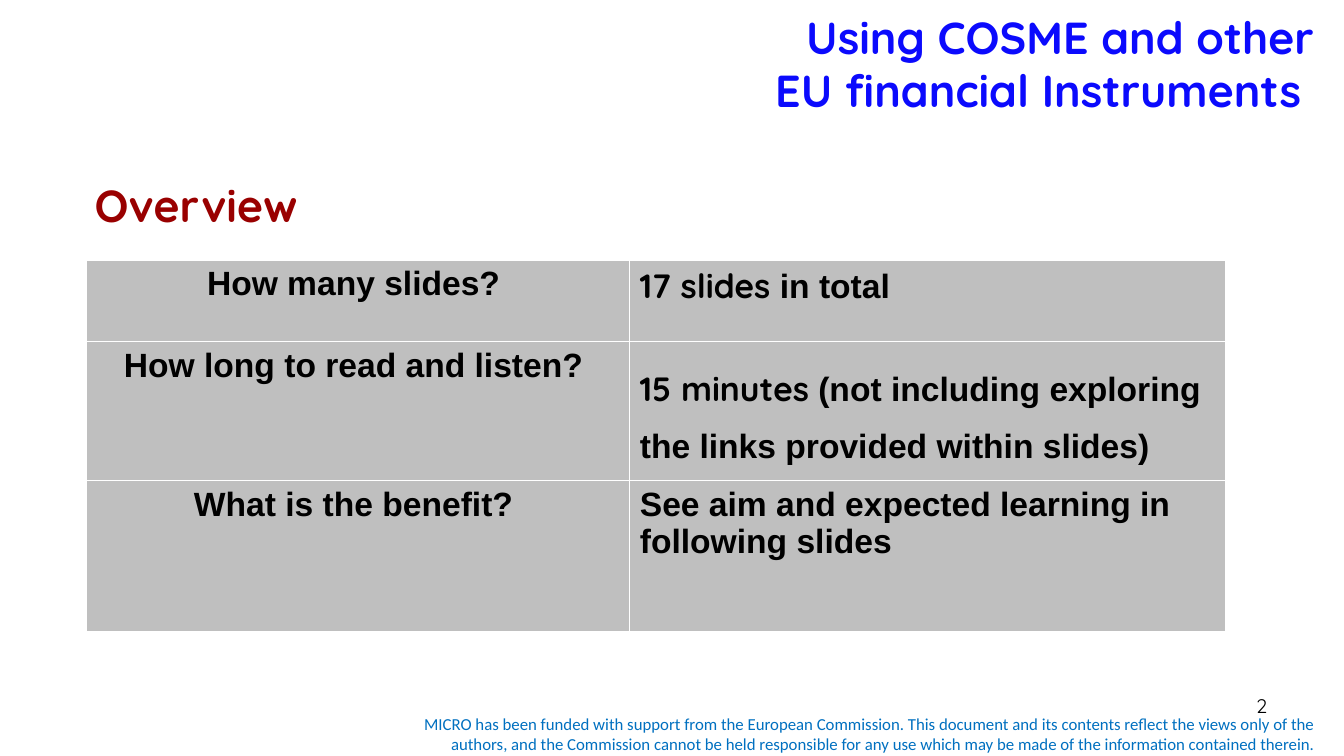
import pptx
import pptx.util
import pptx.dml.color
import pptx.enum.text
import pptx.oxml
import pptx.oxml.ns

Pt = pptx.util.Pt
RGBColor = pptx.dml.color.RGBColor
ALIGN = pptx.enum.text.PP_ALIGN
ANCHOR = pptx.enum.text.MSO_ANCHOR
AUTO = pptx.enum.text.MSO_AUTO_SIZE

BLACK = RGBColor(0x00, 0x00, 0x00)
WHITE = RGBColor(0xFF, 0xFF, 0xFF)
GREY = RGBColor(0xBF, 0xBF, 0xBF)
BLUE = RGBColor(0x0B, 0x0A, 0xFD)
RED = RGBColor(0x99, 0x00, 0x00)
FOOTER_BLUE = RGBColor(0x00, 0x70, 0xC0)
HEADING = "Quicksand"
BODY = "Arial"
FOOTER = "Calibri"


def write(p, text, font=BODY, size=24, color=BLACK, bold=False,
          align=ALIGN.LEFT, spacing=None):
    p.alignment = align
    if spacing:
        p.line_spacing = spacing
    for i, line in enumerate(text.split("\n")):
        if i:
            p.add_line_break()
        r = p.add_run()
        r.text = line
        r.font.name = font
        r.font.size = Pt(size)
        r.font.bold = bold
        r.font.color.rgb = color


class Deck:
    def __init__(self, width, height):
        self.prs = pptx.Presentation()
        self.prs.slide_width = Pt(width)
        self.prs.slide_height = Pt(height)
        self.s = None

    def add_slide(self):
        self.s = self.prs.slides.add_slide(self.prs.slide_layouts[5])

    def title(self, text, x, y, w, h, **fmt):
        sp = self.s.shapes.title
        sp.left, sp.top, sp.width, sp.height = Pt(x), Pt(y), Pt(w), Pt(h)
        tf = sp.text_frame
        tf.word_wrap = True
        tf.auto_size = AUTO.NONE
        tf.vertical_anchor = ANCHOR.MIDDLE
        write(tf.paragraphs[0], text, **fmt)

    def text(self, text, x, y, w, h, anchor=ANCHOR.TOP, grow=False, **fmt):
        sp = self.s.shapes.add_textbox(Pt(x), Pt(y), Pt(w), Pt(h))
        tf = sp.text_frame
        tf.word_wrap = True
        tf.auto_size = AUTO.SHAPE_TO_FIT_TEXT if grow else AUTO.NONE
        tf.vertical_anchor = anchor
        write(tf.paragraphs[0], text, **fmt)

    def table(self, rows, x, y, widths, heights):
        frame = self.s.shapes.add_table(len(rows), len(widths), Pt(x), Pt(y),
                                        Pt(sum(widths)), Pt(sum(heights)))
        tbl = frame.table
        for column, w in zip(tbl.columns, widths):
            column.width = Pt(w)
        for i, (question, answer, spacing) in enumerate(rows):
            tbl.rows[i].height = Pt(heights[i])
            self.cell(tbl.cell(i, 0), [(question, BODY)], align=ALIGN.CENTER)
            self.cell(tbl.cell(i, 1), answer, spacing=spacing)

    def cell(self, cell, parts, **fmt):
        for text, font in parts:
            write(cell.text_frame.paragraphs[0], text, font=font, bold=True, **fmt)
        tc_pr = cell._tc.get_or_add_tcPr()
        for side in ("lnL", "lnR", "lnT", "lnB"):
            tc_pr.append(pptx.oxml.parse_xml(
                f'<a:{side} {pptx.oxml.ns.nsdecls("a")} w="{Pt(1)}"><a:solidFill>'
                f'<a:srgbClr val="{WHITE}"/></a:solidFill></a:{side}>'))
        cell.fill.solid()
        cell.fill.fore_color.rgb = GREY


def main():
    deck = Deck(960, 540)
    deck.add_slide()
    deck.text("MICRO has been funded with support from the European Commission. "
              "This document and its contents reflect the views only of the authors, "
              "and the Commission cannot be held responsible for any use which may be "
              "made of the information contained therein.",
              270, 506.2, 676.8, 36, anchor=ANCHOR.MIDDLE, grow=True,
              font=FOOTER, size=12, color=FOOTER_BLUE, align=ALIGN.RIGHT)
    deck.table([
        ("How many slides? ", [("17 slides ", HEADING), ("in total", BODY)], None),
        ("How long to read and listen? ",
         [("15 minutes ", HEADING),
          ("(not including exploring the links provided within slides)", BODY)], 1.5),
        ("What is the benefit? ",
         [("See aim and expected learning in following slides", BODY)], None),
    ], 61.9, 185.8, [388, 425.5], [58.3, 99.4, 108])
    deck.text("2", 688.3, 491.8, 223.9, 37.4,
              font=HEADING, size=14, align=ALIGN.RIGHT)
    deck.text("Overview", 60.5, 123.1, 208.1, 46.1, grow=True,
              font=HEADING, size=32, color=RED, bold=True)
    deck.title("Using COSME and other\nEU financial Instruments ", 82.1, 0, 864, 90,
               font=HEADING, size=32, color=BLUE, bold=True, align=ALIGN.RIGHT)
    deck.prs.save("out.pptx")


if __name__ == "__main__":
    main()
